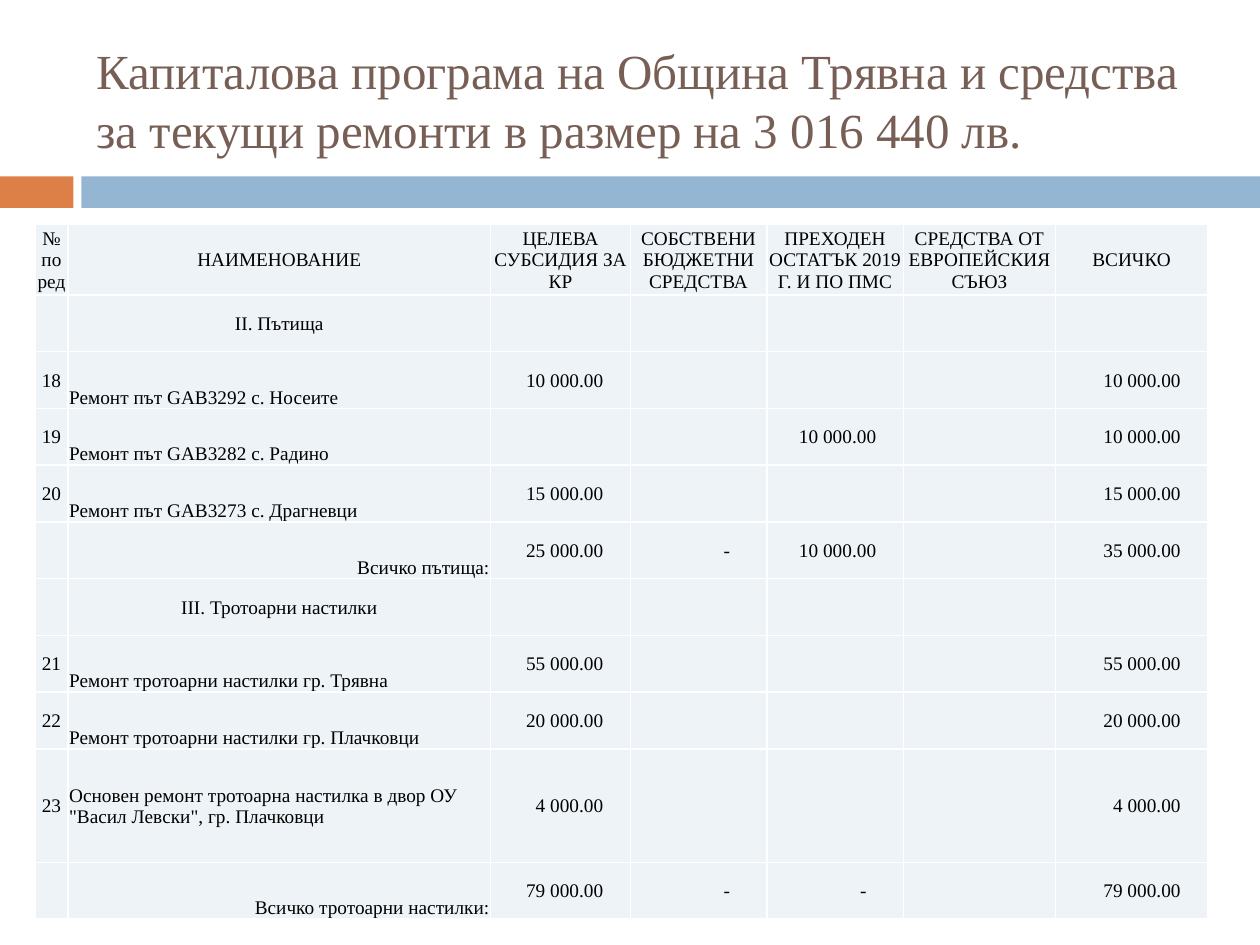
import pptx
import pptx.util
import pptx.dml.color
import pptx.enum.shapes
import pptx.enum.text
import pptx.oxml.ns
from lxml import etree

Pt = pptx.util.Pt
RGBColor = pptx.dml.color.RGBColor
Align = pptx.enum.text.PP_ALIGN
Anchor = pptx.enum.text.MSO_ANCHOR
qn = pptx.oxml.ns.qn

ORANGE = RGBColor(0xDD, 0x80, 0x47)
BLUE = RGBColor(0x94, 0xB6, 0xD2)
BROWN = RGBColor(0x77, 0x5F, 0x55)
PALE = RGBColor(0xEE, 0xF3, 0xF7)
WHITE = RGBColor(0xFF, 0xFF, 0xFF)
BLACK = RGBColor(0, 0, 0)

HEADINGS = [
    "№ по ред", "НАИМЕНОВАНИЕ", "ЦЕЛЕВА СУБСИДИЯ ЗА КР",
    "СОБСТВЕНИ БЮДЖЕТНИ СРЕДСТВА", "ПРЕХОДЕН ОСТАТЪК 2019 Г. И ПО ПМС",
    "СРЕДСТВА ОТ ЕВРОПЕЙСКИЯ СЪЮЗ", "ВСИЧКО",
]
PROGRAMME = [
    ["", "II. Пътища", "", "", "", "", ""],
    ["18", "Ремонт път GAB3292 с. Носеите", "10 000.00", "", "", "", "10 000.00"],
    ["19", "Ремонт път GAB3282 с. Радино", "", "", "10 000.00", "", "10 000.00"],
    ["20", "Ремонт път GAB3273 с. Драгневци", "15 000.00", "", "", "", "15 000.00"],
    ["", "Всичко пътища:", "25 000.00", "-", "10 000.00", "", "35 000.00"],
    ["", "III. Тротоарни настилки", "", "", "", "", ""],
    ["21", "Ремонт тротоарни настилки гр. Трявна", "55 000.00", "", "", "", "55 000.00"],
    ["22", "Ремонт тротоарни настилки гр. Плачковци", "20 000.00", "", "", "", "20 000.00"],
    ["23", "Основен ремонт тротоарна настилка в двор ОУ \"Васил Левски\", гр. Плачковци",
     "4 000.00", "", "", "", "4 000.00"],
    ["", "Всичко тротоарни настилки:", "79 000.00", "-", "-", "", "79 000.00"],
]
COLUMN_WIDTHS = [18.8, 241.6, 79.8, 78, 78, 87.1, 86.9]
HEADING_HEIGHT = 40.3
ROW_HEIGHT = 32.45
TALL_ITEM = "23"


def write(frame, text, size=11, color=BLACK, align=Align.LEFT, font="Times New Roman"):
    paragraph = frame.paragraphs[0]
    paragraph.alignment = align
    paragraph.font.size = Pt(size)
    if text:
        run = paragraph.add_run()
        run.text = text
        run.font.size = Pt(size)
        run.font.name = font
        run.font.color.rgb = color


def cell_format(row, column, text):
    if row == 0 or column == 0:
        return Align.CENTER, Anchor.MIDDLE, 0.7
    if column > 1:
        return Align.RIGHT, Anchor.MIDDLE, 21 if text == "-" else 15.5
    number, _, *amounts = PROGRAMME[row - 1]
    if number:
        return Align.LEFT, Anchor.MIDDLE if number == TALL_ITEM else Anchor.BOTTOM, 0.7
    if any(amounts):
        return Align.RIGHT, Anchor.BOTTOM, 0.7
    return Align.CENTER, Anchor.MIDDLE, 0.7


class SlideBuilder:
    def __init__(self, slide):
        self.slide = slide
        self.cell_fill = PALE
        self.border = WHITE
        self.inset = 0.7

    def title(self, text, left, top, width, height):
        title = self.slide.shapes.title
        title.left, title.top = Pt(left), Pt(top)
        title.width, title.height = Pt(width), Pt(height)
        frame = title.text_frame
        frame.word_wrap = True
        frame.auto_size = pptx.enum.text.MSO_AUTO_SIZE.NONE
        frame.vertical_anchor = Anchor.MIDDLE
        write(frame, text, size=28, color=BROWN)

    def bar(self, left, top, width, height, color):
        bar = self.slide.shapes.add_shape(
            pptx.enum.shapes.MSO_SHAPE.RECTANGLE, Pt(left), Pt(top), Pt(width), Pt(height))
        bar.shadow.inherit = False
        bar.fill.solid()
        bar.fill.fore_color.rgb = color
        bar.line.fill.background()

    def cell(self, cell, text, align, anchor, right_inset):
        cell.vertical_anchor = anchor
        cell.margin_left = cell.margin_top = Pt(self.inset)
        cell.margin_right, cell.margin_bottom = Pt(right_inset), Pt(0)
        properties = cell._tc.get_or_add_tcPr()
        for side in ("a:lnL", "a:lnR", "a:lnT", "a:lnB"):
            line = etree.SubElement(properties, qn(side), w=str(Pt(1)))
            solid = etree.SubElement(line, qn("a:solidFill"))
            etree.SubElement(solid, qn("a:srgbClr"), val=str(self.border))
        cell.fill.solid()
        cell.fill.fore_color.rgb = self.cell_fill
        write(cell.text_frame, text, align=align)

    def table(self, rows, left, top, widths, heights):
        table = self.slide.shapes.add_table(
            len(rows), len(widths), Pt(left), Pt(top), Pt(sum(widths)), Pt(sum(heights))).table
        table.first_row = table.horz_banding = False
        for column, width in zip(table.columns, widths):
            column.width = Pt(width)
        for row, height in zip(table.rows, heights):
            row.height = Pt(height)
        for r, texts in enumerate(rows):
            for c, text in enumerate(texts):
                self.cell(table.cell(r, c), text, *cell_format(r, c, text))


def main():
    presentation = pptx.Presentation()
    presentation.slide_width, presentation.slide_height = Pt(720), Pt(540)
    builder = SlideBuilder(presentation.slides.add_slide(presentation.slide_layouts[5]))
    builder.bar(0, 100.8, 42, 18, ORANGE)
    builder.bar(46.5, 100.8, 673.5, 18, BLUE)
    builder.title(
        "Капиталова програма на Община Трявна и средства за текущи ремонти "
        "в размер на 3 016 440 лв.", 48, 18, 642, 78)
    heights = [HEADING_HEIGHT] + [
        ROW_HEIGHT * (2 if number == TALL_ITEM else 1) for number, *_ in PROGRAMME]
    builder.table([HEADINGS] + PROGRAMME, 20, 128.2, COLUMN_WIDTHS, heights)
    presentation.save("out.pptx")


if __name__ == "__main__":
    main()
